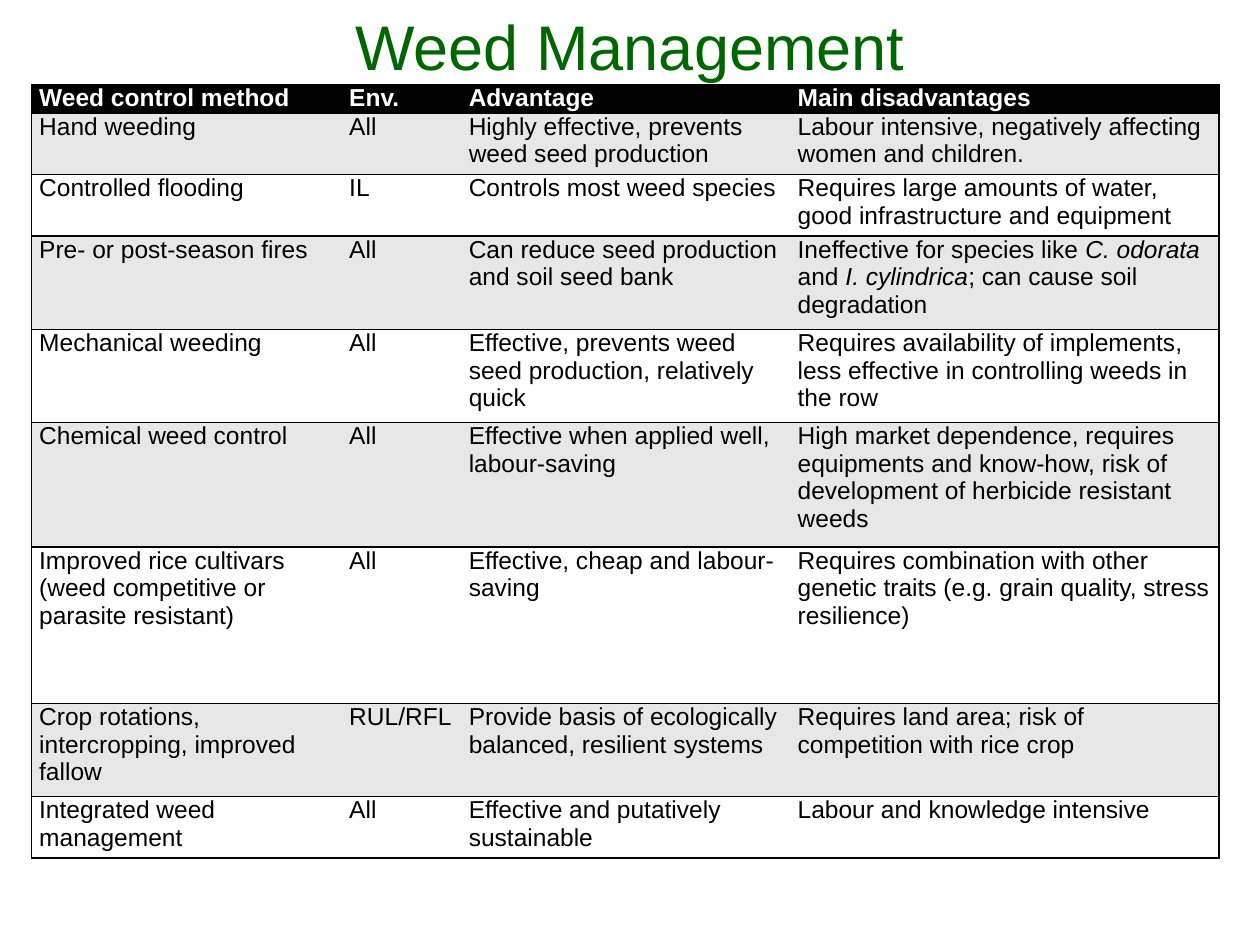
from dataclasses import dataclass

from lxml import etree
from pptx import Presentation
from pptx.dml.color import RGBColor
from pptx.enum.text import MSO_ANCHOR, PP_ALIGN
from pptx.oxml.ns import qn
from pptx.slide import Slide
from pptx.table import Table, _Cell
from pptx.text.text import _Paragraph
from pptx.util import Cm, Pt

CENTER = PP_ALIGN.CENTER
MIDDLE = MSO_ANCHOR.MIDDLE

GREEN = RGBColor(0x00, 0x66, 0x00)
BLACK = RGBColor(0x00, 0x00, 0x00)
WHITE = RGBColor(0xFF, 0xFF, 0xFF)
GREY = RGBColor(0xE7, 0xE7, 0xE7)

FONT = "Arial"
PLAIN_TABLE_STYLE = "{2D5ABB26-0587-4C30-8999-92F81FD0307C}"
ITALIC_MARK = "*"
COLUMN_WIDTHS = (6.25, 2.41, 6.63, 8.64)
HEADER_HEIGHT = 0.58
HEADINGS = ("Weed control method", "Env.", "Advantage", "Main disadvantages")
CELL_MARGINS = {
    "margin_left": Cm(0.15),
    "margin_right": Cm(0.15),
    "margin_top": 0,
    "margin_bottom": 0,
}


@dataclass(frozen=True)
class TextFormat:
    size: int
    color: RGBColor
    bold: bool = False
    space_after: int = 0


@dataclass(frozen=True)
class WeedMethod:
    name: str
    environment: str
    advantage: str
    disadvantage: str
    height: float

    def texts(self) -> tuple[str, ...]:
        return self.name, self.environment, self.advantage, self.disadvantage


TITLE_FORMAT = TextFormat(36, GREEN)
HEADER_FORMAT = TextFormat(14, WHITE, bold=True)
BODY_FORMAT = TextFormat(14, BLACK, space_after=6)

METHODS = (
    WeedMethod("Hand weeding", "All",
               "Highly effective, prevents weed seed production",
               "Labour intensive, negatively affecting women and children.", 1.24),
    WeedMethod("Controlled flooding", "IL", "Controls most weed species",
               "Requires large amounts of water, good infrastructure and equipment", 1.24),
    WeedMethod("Pre- or post-season fires", "All",
               "Can reduce seed production and soil seed bank",
               "Ineffective for species like *C. odorata *and *I. cylindrica*"
               "; can cause soil degradation", 1.88),
    WeedMethod("Mechanical weeding", "All",
               "Effective, prevents weed seed production, relatively quick",
               "Requires availability of implements, less effective in controlling "
               "weeds in the row", 1.88),
    WeedMethod("Chemical weed control", "All",
               "Effective when applied well, labour-saving",
               "High market dependence, requires equipments and know-how, risk of "
               "development of herbicide resistant weeds", 2.51),
    WeedMethod("Improved rice cultivars (weed competitive or parasite resistant)", "All",
               "Effective, cheap and labour-saving",
               "Requires combination with other genetic traits (e.g. grain quality, "
               "stress resilience)", 3.15),
    WeedMethod("Crop rotations, intercropping, improved fallow", "RUL/RFL",
               "Provide basis of ecologically balanced, resilient systems",
               "Requires land area; risk of competition with rice crop", 1.88),
    WeedMethod("Integrated weed management", "All",
               "Effective and putatively sustainable",
               "Labour and knowledge intensive", 1.24),
)


def set_attributes(target: object, values: dict) -> None:
    for name, value in values.items():
        setattr(target, name, value)


def write_text(paragraph: _Paragraph, text: str, style: TextFormat) -> None:
    paragraph.space_after = Pt(style.space_after)
    for index, part in enumerate(text.split(ITALIC_MARK)):
        run = paragraph.add_run()
        run.text = part
        set_attributes(run.font, {
            "name": FONT,
            "size": Pt(style.size),
            "bold": style.bold,
            "italic": index % 2 == 1,
        })
        run.font.color.rgb = style.color


def add_borders(cell: _Cell, sides: str) -> None:
    properties = cell._tc.get_or_add_tcPr()
    for side in sides:
        line = etree.SubElement(properties, qn(f"a:ln{side}"), w=str(Pt(1)))
        fill = etree.SubElement(line, qn("a:solidFill"))
        etree.SubElement(fill, qn("a:srgbClr"), val=str(BLACK))


def fill_row(table: Table, row: int, texts: tuple[str, ...],
             style: TextFormat, background: RGBColor) -> None:
    outer_sides = {0: "L", len(texts) - 1: "R"}
    for column, text in enumerate(texts):
        cell = table.cell(row, column)
        set_attributes(cell, CELL_MARGINS)
        add_borders(cell, outer_sides.get(column, "") + "TB")
        cell.fill.solid()
        cell.fill.fore_color.rgb = background
        write_text(cell.text_frame.paragraphs[0], text, style)


def add_title(slide: Slide, text: str) -> None:
    frame = slide.shapes.add_textbox(0, Cm(0.13), Cm(25.4), Cm(1.57)).text_frame
    set_attributes(frame, {"word_wrap": True, "vertical_anchor": MIDDLE})
    heading = frame.paragraphs[0]
    heading.alignment = CENTER
    write_text(heading, text, TITLE_FORMAT)


def add_method_table(slide: Slide) -> None:
    heights = [HEADER_HEIGHT] + [method.height for method in METHODS]
    table = slide.shapes.add_table(
        len(heights), len(COLUMN_WIDTHS), Cm(0.64), Cm(1.7),
        Cm(sum(COLUMN_WIDTHS)), Cm(sum(heights))).table
    set_attributes(table, {"first_row": False, "horz_banding": False})
    table._tbl.tblPr.find(qn("a:tableStyleId")).text = PLAIN_TABLE_STYLE
    for column, width in zip(table.columns, COLUMN_WIDTHS):
        column.width = Cm(width)
    for row, height in zip(table.rows, heights):
        row.height = Cm(height)
    fill_row(table, 0, HEADINGS, HEADER_FORMAT, BLACK)
    for row, method in enumerate(METHODS, start=1):
        fill_row(table, row, method.texts(), BODY_FORMAT, GREY if row % 2 else WHITE)


def main() -> None:
    deck = Presentation()
    set_attributes(deck, {"slide_width": Cm(25.4), "slide_height": Cm(19.05)})
    slide = deck.slides.add_slide(deck.slide_layouts[6])
    add_method_table(slide)
    add_title(slide, "Weed Management")
    deck.save("out.pptx")


if __name__ == "__main__":
    main()
